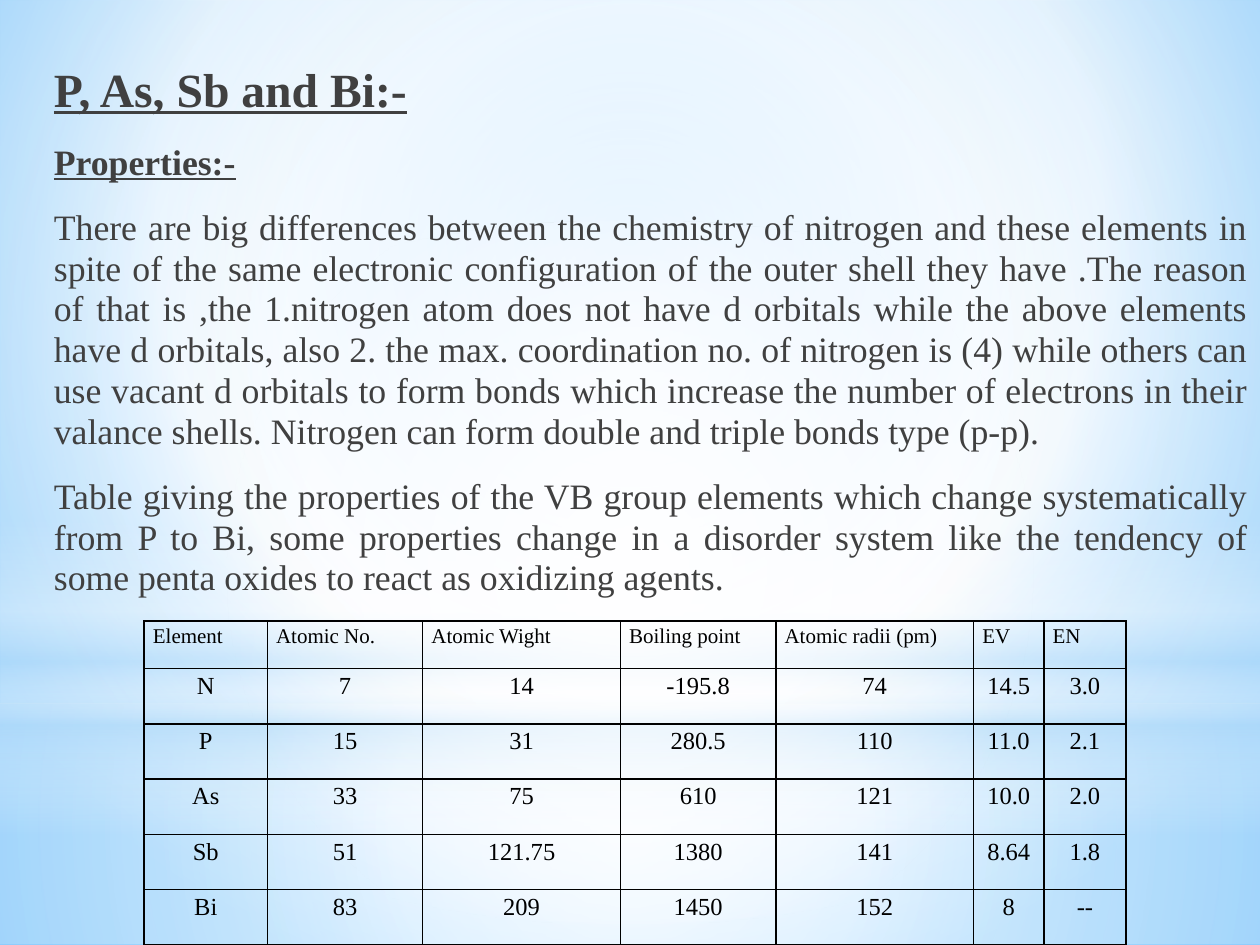
from dataclasses import dataclass

from lxml.etree import SubElement
from pptx import Presentation
from pptx.dml.color import RGBColor
from pptx.enum.shapes import MSO_SHAPE
from pptx.enum.text import PP_ALIGN
from pptx.oxml.ns import qn
from pptx.util import Pt


@dataclass(frozen=True)
class Theme:
    font: str = "Times New Roman"
    body_color: str = "404040"
    table_color: str = "000000"
    white: str = "FFFFFF"
    pale_blue: str = "B4DCFA"
    sky: str = "9ED5FF"
    deep_sky: str = "5BB9FF"
    title_size: float = 27.2
    body_size: float = 20.4
    header_size: float = 12
    value_size: float = 14


THEME = Theme()
CENTER = (50, 50, 50, 50)

CHEMISTRY = (
    "There are big differences between the chemistry of nitrogen and these elements "
    "in spite of the same electronic configuration of the outer shell they have "
    ".The reason of that is ,the 1.nitrogen atom does not have d orbitals while the "
    "above elements have d orbitals, also 2. the max. coordination no. of nitrogen "
    "is (4) while others can use vacant d orbitals to form bonds which increase the "
    "number of electrons in their valance shells. Nitrogen can form double and "
    "triple bonds type (p-p)."
)
TABLE_INTRO = (
    "Table giving the properties of the VB group elements which change "
    "systematically from P to Bi, some properties change in a disorder system like "
    "the tendency of some penta oxides to react as oxidizing agents."
)
ELEMENTS = [
    ("Element", "Atomic No.", "Atomic Wight", "Boiling point",
     "Atomic radii (pm)", "EV", "EN"),
    ("N", "7", "14", "-195.8", "74", "14.5", "3.0"),
    ("P", "15", "31", "280.5", "110", "11.0", "2.1"),
    ("As", "33", "75", "610", "121", "10.0", "2.0"),
    ("Sb", "51", "121.75", "1380", "141", "8.64", "1.8"),
    ("Bi", "83", "209", "1450", "152", "8", "--"),
]
COLUMN_WIDTHS = (70.4, 88.8, 113, 88.8, 113, 40.2, 46.9)
HEADER_HEIGHT, ROW_HEIGHT = 27.1, 31.6


def write(paragraph, text, *, size, color=THEME.body_color, bold=False,
          underline=False, align=PP_ALIGN.LEFT, line_spacing=0.95,
          before=0, after=0):
    paragraph.alignment = align
    paragraph.line_spacing = line_spacing
    paragraph.space_before, paragraph.space_after = Pt(before), Pt(after)
    run = paragraph.add_run()
    run.text = text
    font = run.font
    font.name, font.size = THEME.font, Pt(size)
    font.bold, font.underline = bold, underline
    font.color.rgb = RGBColor.from_string(color)


def add_color(parent, color, opacity=100):
    node = SubElement(parent, qn("a:srgbClr"), val=color)
    if opacity < 100:
        SubElement(node, qn("a:alpha"), val=str(opacity * 1000))


def paint_gradient(properties, stops, center=None):
    """Swap the solid fill for a circular gradient, or a vertical one without center."""
    solid = properties.find(qn("a:solidFill"))
    gradient = properties.makeelement(qn("a:gradFill"), {"rotWithShape": "1"})
    properties.replace(solid, gradient)
    stop_list = SubElement(gradient, qn("a:gsLst"))
    for position, *color in stops:
        stop = SubElement(stop_list, qn("a:gs"), pos=str(position * 1000))
        add_color(stop, *color)
    if center:
        circle = SubElement(gradient, qn("a:path"), path="circle")
        sides = {side: str(share * 1000) for side, share in zip("ltrb", center)}
        SubElement(circle, qn("a:fillToRect"), sides)
    else:
        SubElement(gradient, qn("a:lin"), ang="5400000", scaled="0")


def add_glow(slide, kind, top, height, stops, center=None):
    glow = slide.shapes.add_shape(kind, Pt(0), Pt(top), Pt(720), Pt(height))
    glow.shadow.inherit = False
    glow.line.fill.background()
    glow.fill.solid()
    paint_gradient(glow.element.spPr, stops, center)


def add_backdrop(slide):
    white, pale = THEME.white, THEME.pale_blue
    slide.background.fill.solid()
    paint_gradient(slide.element.find(".//" + qn("p:bgPr")),
                   [(0, THEME.sky), (60, white), (100, THEME.deep_sky)],
                   (20, 10, 20, 60))
    # Floor, wall, horizon band and central light
    add_glow(slide, MSO_SHAPE.RECTANGLE, 402, 138,
             [(0, white, 91), (37, white, 76), (100, pale, 79)], CENTER)
    add_glow(slide, MSO_SHAPE.RECTANGLE, 0, 402,
             [(0, white, 89), (48, white, 62), (100, pale, 79)], CENTER)
    add_glow(slide, MSO_SHAPE.RECTANGLE, 297, 180,
             [(0, white, 0), (29, white, 30), (45, pale, 40),
              (55, white, 26), (65, pale, 60), (100, white, 0)])
    add_glow(slide, MSO_SHAPE.OVAL, 126, 402,
             [(0, white), (56, white, 0)], CENTER)


def add_body(slide):
    frame = slide.shapes.add_textbox(Pt(20), Pt(0), Pt(700), Pt(540)).text_frame
    frame.word_wrap = True
    frame.margin_left, frame.margin_right = Pt(10.8), Pt(7.2)
    frame.margin_top, frame.margin_bottom = Pt(36.5), Pt(0)
    heading = {"bold": True, "underline": True}
    prose = {"size": THEME.body_size, "align": PP_ALIGN.JUSTIFY, "before": 4}
    passages = [
        ("P, As, Sb and Bi:-", {"size": THEME.title_size, **heading}),
        ("Properties:-", {"size": THEME.body_size, "before": 4, **heading}),
        (CHEMISTRY, prose),
        (TABLE_INTRO, prose),
    ]
    for index, (text, style) in enumerate(passages):
        paragraph = frame.add_paragraph() if index else frame.paragraphs[0]
        write(paragraph, text, after=10, **style)


def outline_cell(cell):
    properties = cell._tc.get_or_add_tcPr()
    for index, side in enumerate(("a:lnL", "a:lnR", "a:lnT", "a:lnB")):
        border = properties.makeelement(qn(side), {"w": str(Pt(1))})
        properties.insert(index, border)
        add_color(SubElement(border, qn("a:solidFill")), THEME.table_color)


def add_properties_table(slide):
    heights = [HEADER_HEIGHT] + [ROW_HEIGHT] * (len(ELEMENTS) - 1)
    table = slide.shapes.add_table(
        len(ELEMENTS), len(COLUMN_WIDTHS), Pt(82.4), Pt(354.9),
        Pt(sum(COLUMN_WIDTHS)), Pt(sum(heights))).table
    table.first_row = table.horz_banding = False
    for column, width in zip(table.columns, COLUMN_WIDTHS):
        column.width = Pt(width)
    for row_index, (height, values) in enumerate(zip(heights, ELEMENTS)):
        table.rows[row_index].height = Pt(height)
        if row_index:
            style = {"size": THEME.value_size, "align": PP_ALIGN.CENTER}
        else:
            style = {"size": THEME.header_size}
        for cell, value in zip(table.rows[row_index].cells, values):
            cell.fill.background()
            cell.margin_left = cell.margin_right = Pt(5)
            cell.margin_top = cell.margin_bottom = Pt(0)
            write(cell.text_frame.paragraphs[0], value, color=THEME.table_color,
                  line_spacing=1.15, **style)
            outline_cell(cell)


def main():
    presentation = Presentation()
    presentation.slide_width, presentation.slide_height = Pt(720), Pt(540)
    slide = presentation.slides.add_slide(presentation.slide_layouts[6])
    add_backdrop(slide)
    add_body(slide)
    add_properties_table(slide)
    presentation.save("out.pptx")


if __name__ == "__main__":
    main()
